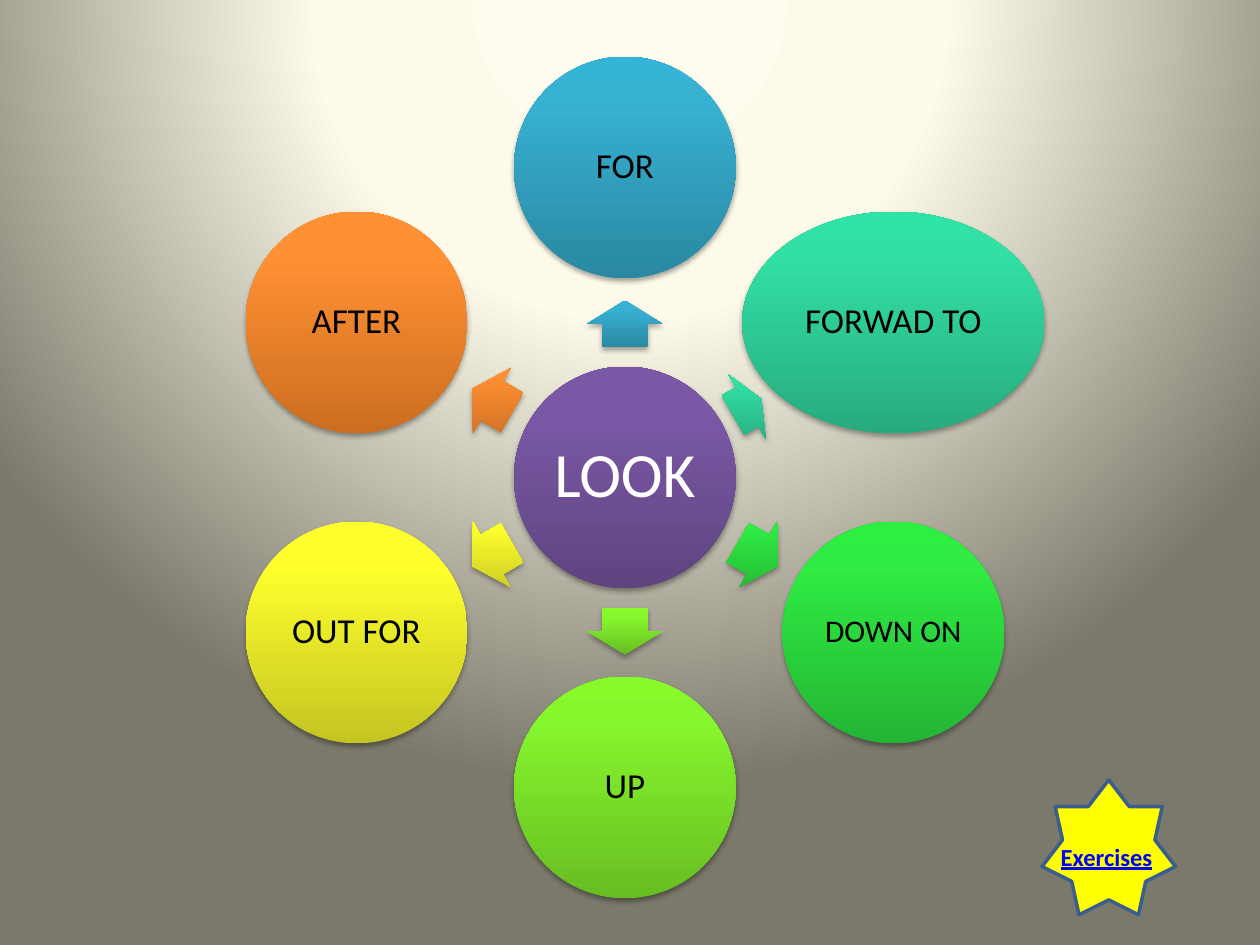
"""Build a slide with a radial diagram of phrasal verbs around LOOK."""
import math

import pptx
import pptx.dml.color
import pptx.enum.shapes
import pptx.enum.text
import pptx.oxml.ns
import pptx.oxml.xmlchemy
import pptx.util
from lxml import etree

Inches = pptx.util.Inches
Pt = pptx.util.Pt
qn = pptx.oxml.ns.qn
SHAPES = pptx.enum.shapes.MSO_SHAPE

COLORS = {
    "black": "000000", "white": "FFFFFF", "link": "0000FF",
    "star": "FFFF00", "star_line": "3A5F8C",
}
GRADIENTS = {
    "background": ("FEFCEE", "FDFAEA", "7B796B"),
    "purple": ("5F4480", "7B58A6", "7C57A8"),
    "blue": ("2A88A2", "37B1D2", "34B4D6"),
    "teal": ("27AB7E", "32DFA4", "2FE3A6"),
    "green": ("24B534", "2FEB43", "2CEF41"),
    "lime": ("67BD22", "86F62D", "86FB29"),
    "yellow": ("C4C521", "FEFF2C", "FEFF2D"),
    "orange": ("CC6E20", "FF9034", "FF9136"),
}
CENTER_X, CENTER_Y = 4.96, 3.79
CIRCLE_SIZE = 1.76
RING_RADIUS, ARROW_RADIUS = 2.46, 1.22
ARROW_LENGTH, ARROW_WIDTH = 0.37, 0.6
TEAL_ARROW = {"x": 5.93, "y": 3.23, "length": 0.26}
SPOKES = [
    ("FOR", "blue", 270, {}, {}),
    ("FORWAD TO", "teal", 330, {"width": 2.4}, TEAL_ARROW),
    ("DOWN ON", "green", 30, {"size": 18}, {}),
    ("UP", "lime", 90, {}, {}),
    ("OUT FOR", "yellow", 150, {}, {}),
    ("AFTER", "orange", 210, {}, {}),
]


def rgb(name):
    return pptx.dml.color.RGBColor.from_string(COLORS[name])


def add_child(parent, tag, **attributes):
    child = etree.SubElement(parent, qn(tag))
    for name, value in attributes.items():
        child.set(name, str(value))
    return child


def set_gradient(owner, fill, name, middle):
    fill.gradient()
    gradient = next(owner.iter(qn("a:gradFill")))
    for child in list(gradient):
        gradient.remove(child)
    gradient.set("rotWithShape", "0")
    stops = add_child(gradient, "a:gsLst")
    for position, color in zip((0, middle, 100), GRADIENTS[name]):
        stop = add_child(stops, "a:gs", pos=position * 1000)
        add_child(stop, "a:srgbClr", val=color)
    return gradient


def set_background(slide):
    gradient = set_gradient(slide.element, slide.background.fill, "background", 40)
    shade = add_child(gradient, "a:path", path="circle")
    add_child(shade, "a:fillToRect", l=50000, t=-80000, r=50000, b=180000)


def add_shadow(shape):
    shape.shadow.inherit = False
    effects = shape.element.spPr.find(qn("a:effectLst"))
    shadow = add_child(effects, "a:outerShdw", blurRad=Pt(3.1), dist=Pt(1.8),
                       dir=5400000, rotWithShape=0)
    color = add_child(shadow, "a:srgbClr", val=COLORS["black"])
    add_child(color, "a:alpha", val=35000)


def add_glossy_shape(slide, kind, x, y, width, height, gradient_name):
    shape = slide.shapes.add_shape(kind, Inches(x - width / 2), Inches(y - height / 2),
                                   Inches(width), Inches(height))
    gradient = set_gradient(shape.element, shape.fill, gradient_name, 80)
    add_child(gradient, "a:lin", ang=270 * 60000, scaled=0)
    shape.line.fill.background()
    add_shadow(shape)
    return shape


def write_text(shape, text, *, size, color, centered=True, inset=None,
               spacing=None, bold=False, underline=False):
    frame = shape.text_frame
    frame.word_wrap = True
    if inset is not None:
        frame.margin_left = frame.margin_right = Inches(inset)
        frame.margin_top = frame.margin_bottom = Inches(inset)
    paragraph = frame.paragraphs[0]
    if centered:
        frame.vertical_anchor = pptx.enum.text.MSO_ANCHOR.MIDDLE
        paragraph.alignment = pptx.enum.text.PP_ALIGN.CENTER
    paragraph.line_spacing = spacing
    run = paragraph.add_run()
    run.text = text
    run.font.name = "Calibri"
    run.font.size = Pt(size)
    run.font.bold = bold
    run.font.underline = underline
    run.font.color.rgb = rgb(color)


def add_circle(slide, text, gradient, x, y, width=CIRCLE_SIZE, size=20,
               color="black", inset=0.03):
    circle = add_glossy_shape(slide, SHAPES.OVAL, x, y, width, CIRCLE_SIZE, gradient)
    write_text(circle, text, size=size, color=color, inset=inset, spacing=0.9)


def add_arrow(slide, gradient, angle, x, y, length=ARROW_LENGTH):
    arrow = add_glossy_shape(slide, SHAPES.RIGHT_ARROW, x, y, length, ARROW_WIDTH, gradient)
    arrow.adjustments[0] = 0.6
    arrow.adjustments[1] = 0.5
    arrow.rotation = angle


def ring_point(radius, angle):
    radians = math.radians(angle)
    return {"x": CENTER_X + radius * math.cos(radians),
            "y": CENTER_Y + radius * math.sin(radians)}


def add_exercises_star(slide):
    star = slide.shapes.add_shape(SHAPES.STAR_7_POINT, Inches(8.27), Inches(6.19),
                                  Inches(1.06), Inches(1.07))
    star.shadow.inherit = False
    star.fill.solid()
    star.fill.fore_color.rgb = rgb("star")
    star.line.color.rgb = rgb("star_line")
    star.line.width = Pt(2)
    label = slide.shapes.add_textbox(Inches(8.32), Inches(6.63), Inches(0.96), Inches(0.34))
    write_text(label, "Exercises", size=14, color="link", centered=False,
               bold=True, underline=True)


def main():
    presentation = pptx.Presentation()
    presentation.slide_width = Inches(10)
    presentation.slide_height = Inches(7.5)
    slide = presentation.slides.add_slide(presentation.slide_layouts[6])
    set_background(slide)
    add_circle(slide, "LOOK", "purple", CENTER_X, CENTER_Y, size=36,
               color="white", inset=0.05)
    for text, gradient, angle, circle_format, arrow_format in SPOKES:
        add_arrow(slide, gradient, angle, **{**ring_point(ARROW_RADIUS, angle), **arrow_format})
        add_circle(slide, text, gradient, **ring_point(RING_RADIUS, angle), **circle_format)
    add_exercises_star(slide)
    presentation.save("out.pptx")


if __name__ == "__main__":
    main()
